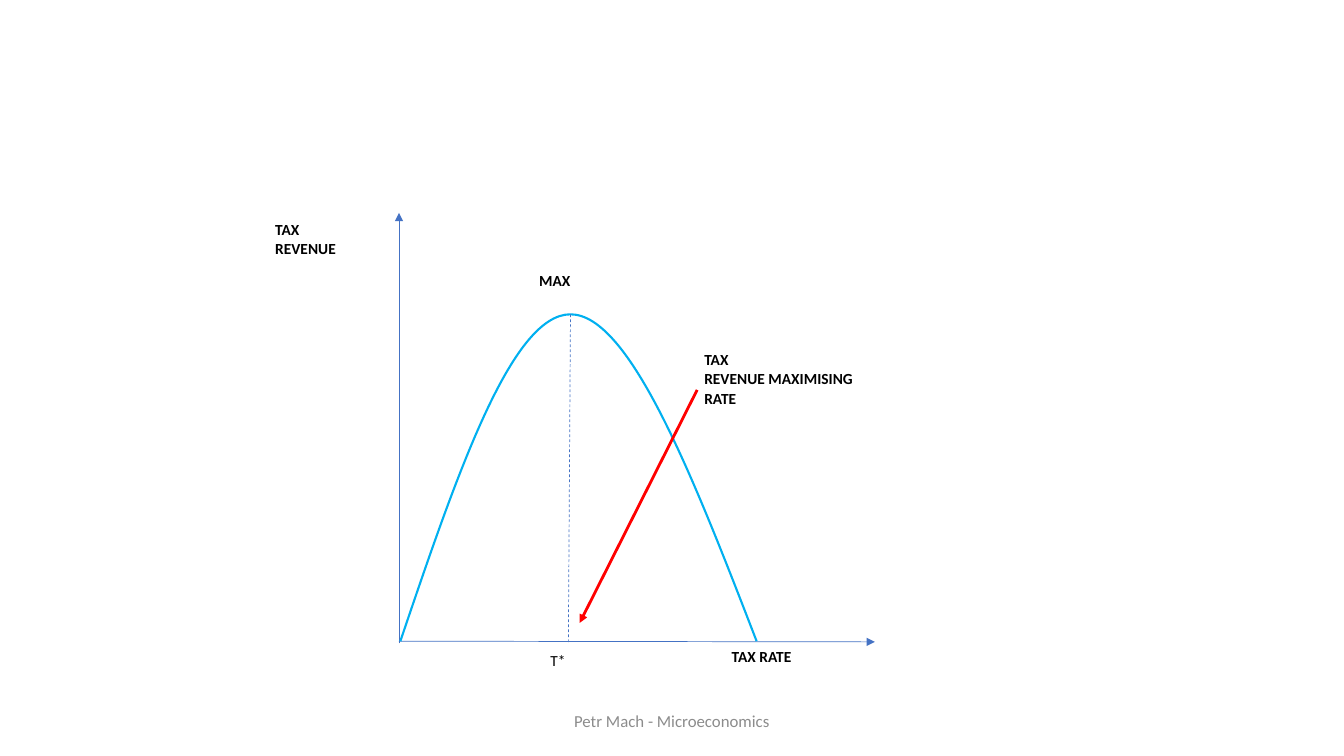
"""Draw the tax revenue curve slide."""
from pptx import Presentation
from pptx.dml.color import RGBColor
from pptx.enum.dml import MSO_LINE
from pptx.enum.shapes import MSO_CONNECTOR, MSO_SHAPE
from pptx.enum.text import MSO_ANCHOR, PP_ALIGN
from pptx.oxml.ns import qn
from pptx.util import Pt
from lxml.etree import SubElement

BLACK = RGBColor(0, 0, 0)
WHITE = RGBColor(255, 255, 255)
GREY = RGBColor(0x8C, 0x8C, 0x8C)
BLUE = RGBColor(0x44, 0x72, 0xC4)
CYAN = RGBColor(0, 0xB0, 0xF0)
RED = RGBColor(255, 0, 0)

LABELS = [
    ("TAX\nREVENUE MAXIMISING RATE", (496, 245.5, 139, 134), True, 1.06, 8),
    ("T*", (386, 459.5, 57.5, 38), False, 1.15, 10),
    ("TAX RATE", (515.5, 458, 117.5, 38), True, 1.07, 8),
    ("MAX", (378, 189.5, 78, 38), True, 1.07, 8),
    ("TAX\nREVENUE", (189.5, 152.5, 107.5, 72.5), True, 1.07, 8),
]
START = (286, 458)
PEAK = (407.5, 224.5)
CURVE = [(325.5, 341.5), (365, 224.5), PEAK,
         (450, 224.5), (495.5, 341.5), (540.5, 458)]


def write(frame, text, size, color, bold=False):
    """Put one wrapped paragraph in a text frame and return it."""
    frame.word_wrap = True
    para = frame.paragraphs[0]
    para.text = text
    font = para.font
    font.name, font.size, font.bold = "Calibri", Pt(size), bold
    font.color.rgb = color
    return para


def label(shapes, text, box, bold, space, after):
    """Add a white box with a left-aligned label."""
    shape = shapes.add_shape(MSO_SHAPE.RECTANGLE, *map(Pt, box))
    shape.shadow.inherit = False
    shape.fill.solid()
    shape.fill.fore_color.rgb = WHITE
    shape.line.fill.background()
    shape.text_frame.vertical_anchor = MSO_ANCHOR.TOP
    para = write(shape.text_frame, text, 11, BLACK, bold)
    para.alignment = PP_ALIGN.LEFT
    para.line_spacing, para.space_after = space, Pt(after)


def line(shapes, start, end, color, width, arrow=True):
    """Add a straight arrow, or a dashed line without a head."""
    link = shapes.add_connector(MSO_CONNECTOR.STRAIGHT, *map(Pt, start + end))
    link.line.color.rgb = color
    link.line.width = Pt(width)
    if arrow:
        SubElement(link.line._get_or_add_ln(), qn("a:tailEnd"), type="triangle")
    else:
        link.line.dash_style = MSO_LINE.DASH
    SubElement(link._element.spPr, qn("a:effectLst"))


def curve(shapes, start, points, color, width):
    """Add an open outline whose points form cubic Bezier segments."""
    pen = shapes.build_freeform(Pt(start[0]), Pt(start[1]))
    pen.add_line_segments([(Pt(x), Pt(y)) for x, y in points], close=False)
    shape = pen.convert_to_shape()
    shape.shadow.inherit = False
    shape.fill.background()
    shape.line.color.rgb = color
    shape.line.width = Pt(width)
    route = shape._element.find(".//" + qn("a:path"))
    steps = route.findall(qn("a:lnTo"))
    for i in range(0, len(steps), 3):
        bend = SubElement(route, qn("a:cubicBezTo"))
        for step in steps[i:i + 3]:
            bend.append(step[0])
            route.remove(step)


def main():
    """Build and save the slide."""
    deck = Presentation()
    deck.slide_width, deck.slide_height = Pt(960), Pt(540)
    shapes = deck.slides.add_slide(deck.slide_layouts[6]).shapes
    foot = shapes.add_textbox(Pt(318), Pt(500.5), Pt(324), Pt(28.75))
    foot.text_frame.vertical_anchor = MSO_ANCHOR.MIDDLE
    para = write(foot.text_frame, "Petr Mach - Microeconomics", 12, GREY)
    para.alignment = PP_ALIGN.CENTER
    for item in LABELS:
        label(shapes, *item)
    line(shapes, (285, 459.5), (285, 152), BLUE, 0.5)
    line(shapes, (285, 458), (625, 458.5), BLUE, 0.5)
    curve(shapes, START, CURVE, CYAN, 1.5)
    line(shapes, PEAK, (406, 459.5), BLUE, 0.5, arrow=False)
    line(shapes, (498, 278.5), (414, 445), RED, 2)
    deck.save("out.pptx")


if __name__ == "__main__":
    main()
